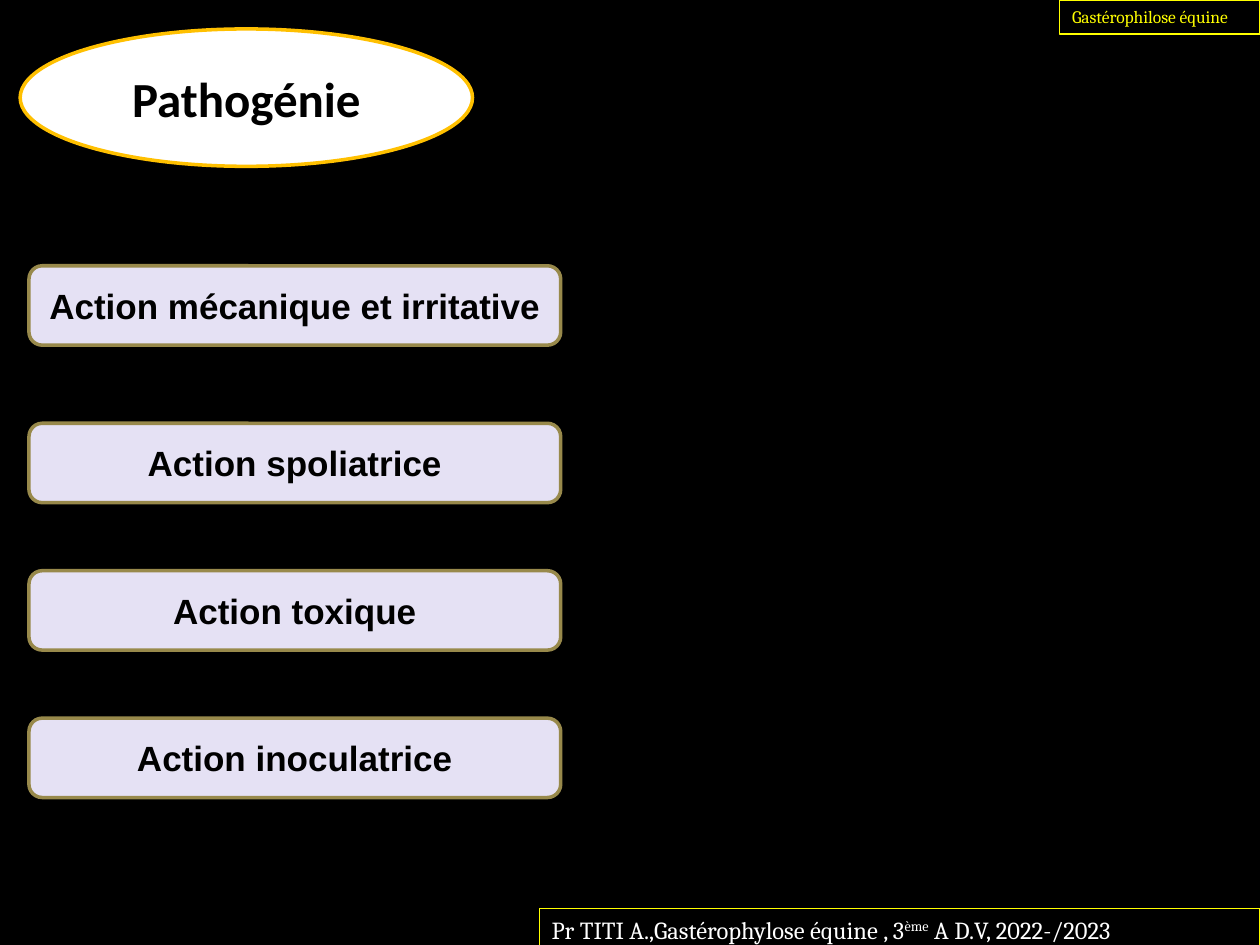
import pptx
import pptx.util
from pptx.dml.color import RGBColor
from pptx.enum.shapes import MSO_SHAPE
from pptx.enum.text import MSO_ANCHOR, MSO_AUTO_SIZE, PP_ALIGN

Pt = pptx.util.Pt

COLORS = {
    "background": "000000",
    "dark_text": "000000",
    "title_fill": "FFFFFF",
    "title_line": "FFC000",
    "action_fill": "E5E1F4",
    "action_line": "98894B",
    "yellow": "FFFF00",
    "footer_text": "FFFFFF",
}

ACTIONS = [
    (151.92, "Action mécanique et irritative"),
    (241.92, "Action spoliatrice"),
    (326.16, "Action toxique"),
    (410.4, "Action inoculatrice"),
]


def rgb(name):
    return RGBColor.from_string(COLORS[name])


def style_text(p, font, size, color, bold=False):
    p.font.name = font
    p.font.size = Pt(size)
    p.font.bold = bold
    p.font.color.rgb = rgb(color)


def add_panel(slide, kind, box, fill, line, text, font, size):
    """Filled shape with a bold, centred label."""
    sp = slide.shapes.add_shape(kind, *map(Pt, box))
    sp.shadow.inherit = False
    sp.fill.solid()
    sp.fill.fore_color.rgb = rgb(fill)
    sp.line.color.rgb = rgb(line)
    sp.line.width = Pt(2)
    tf = sp.text_frame
    tf.word_wrap = True
    tf.vertical_anchor = MSO_ANCHOR.MIDDLE
    p = tf.paragraphs[0]
    p.text = text
    p.alignment = PP_ALIGN.CENTER
    style_text(p, font, size, "dark_text", bold=True)


def add_caption(slide, box, runs, size, color, wrap):
    """Outlined text box; runs are (text, is_superscript) pairs."""
    sp = slide.shapes.add_textbox(*map(Pt, box))
    sp.line.color.rgb = rgb("yellow")
    sp.line.width = Pt(0.75)
    tf = sp.text_frame
    tf.word_wrap = wrap
    tf.auto_size = MSO_AUTO_SIZE.SHAPE_TO_FIT_TEXT
    p = tf.paragraphs[0]
    style_text(p, "Cambria", size, color)
    for text, superscript in runs:
        r = p.add_run()
        r.text = text
        if superscript:
            r._r.get_or_add_rPr().set("baseline", "30000")


def add_actions(slide, left, width, height):
    for top, text in ACTIONS:
        add_panel(slide, MSO_SHAPE.ROUNDED_RECTANGLE, (left, top, width, height),
                  "action_fill", "action_line", text, "Arial", 20)


def main():
    prs = pptx.Presentation()
    prs.slide_width, prs.slide_height = Pt(720), Pt(540)
    slide = prs.slides.add_slide(prs.slide_layouts[6])
    slide.background.fill.solid()
    slide.background.fill.fore_color.rgb = rgb("background")

    add_panel(slide, MSO_SHAPE.OVAL, (11.52, 16.56, 258.48, 78.48),
              "title_fill", "title_line", "Pathogénie", "Calibri", 28)
    add_actions(slide, left=16.56, width=303.84, height=45.36)
    add_caption(slide, (605.52, 0, 114.48, 19.44),
                [("Gastérophilose équine", False)], 10, "yellow", wrap=False)
    add_caption(slide, (308.16, 519.12, 411.84, 24.48),
                [("Pr TITI A.,Gastérophylose équine , 3", False),
                 ("ème", True),
                 (" A D.V, 2022-/2023", False)], 14, "footer_text", wrap=True)
    prs.save("out.pptx")


if __name__ == "__main__":
    main()
